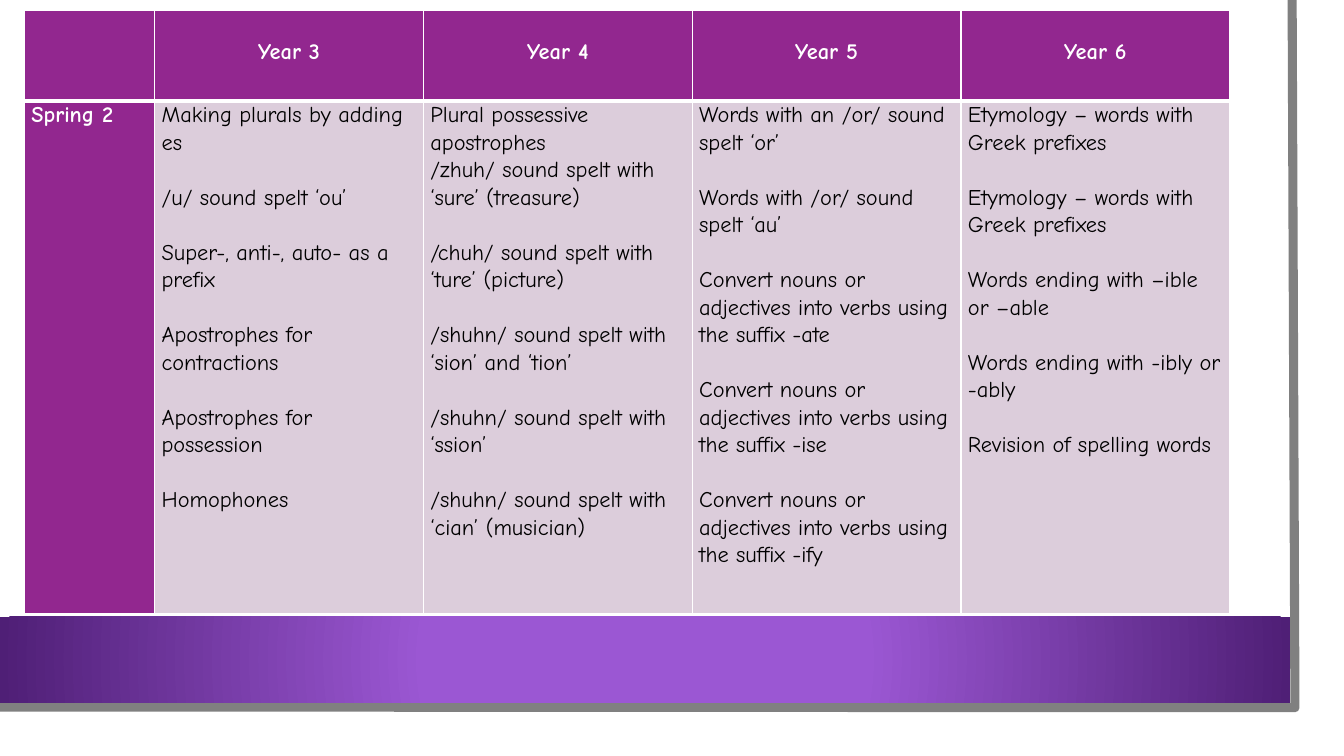
"""Build the Spring 2 spelling overview for Years 3 to 6."""
from dataclasses import dataclass

from lxml import etree
from pptx import Presentation
from pptx.dml.color import RGBColor
from pptx.enum import shapes, text
from pptx.oxml import ns
from pptx.util import Pt


@dataclass(frozen=True)
class Theme:
    font: str = "Comic Neue"
    size: float = 16
    leading: float = 1.07
    gap: float = 19.65
    heading: str = "92278F"
    body: str = "DCCDDB"
    white: str = "FFFFFF"
    black: str = "000000"
    edge: str = "808080"
    band_centre: str = "9B57D3"
    band_rim: str = "4F1F76"


theme = Theme()


def apply(target, values):
    for name, value in values.items():
        setattr(target, name, value)


def border(cell, side, width):
    line = etree.SubElement(cell._tc.get_or_add_tcPr(), ns.qn(f"a:ln{side}"), w=str(Pt(width)))
    fill = etree.SubElement(line, ns.qn("a:solidFill"))
    etree.SubElement(fill, ns.qn("a:srgbClr"), val=theme.white)


topics = {
    "Year 3": [
        "Making plurals by adding es",
        "/u/ sound spelt ‘ou’",
        "Super-, anti-, auto- as a prefix",
        "Apostrophes for contractions",
        "Apostrophes for possession",
        "Homophones",
    ],
    "Year 4": [
        "Plural possessive apostrophes\n/zhuh/ sound spelt with ‘sure’ (treasure)",
        "/chuh/ sound spelt with ‘ture’ (picture)",
        "/shuhn/ sound spelt with ‘sion’ and ‘tion’",
        "/shuhn/ sound spelt with ‘ssion’",
        "/shuhn/ sound spelt with ‘cian’ (musician)",
    ],
    "Year 5": [
        "Words with an /or/ sound spelt ‘or’",
        "Words with /or/ sound spelt ‘au’",
        "Convert nouns or adjectives into verbs using the suffix -ate",
        "Convert nouns or adjectives into verbs using the suffix -ise",
        "Convert nouns or adjectives into verbs using the suffix -ify",
    ],
    "Year 6": [
        "Etymology – words with Greek prefixes",
        "Etymology – words with Greek prefixes",
        "Words ending with –ible or –able",
        "Words ending with -ibly or -ably",
        "Revision of spelling words",
    ],
}

deck = Presentation()
apply(deck, {"slide_width": Pt(960), "slide_height": Pt(540)})
slide = deck.slides.add_slide(deck.slide_layouts[6])

outline = slide.shapes.build_freeform(Pt(923), 0)
outline.add_line_segments([(Pt(925), Pt(505.5)), (0, Pt(505))], close=False)
page_edge = outline.convert_to_shape()
page_edge.shadow.inherit = False
page_edge.fill.background()
page_edge.line.width = Pt(6.5)
page_edge.line.color.rgb = RGBColor.from_string(theme.edge)

band = slide.shapes.add_shape(shapes.MSO_SHAPE.RECTANGLE, 0, Pt(440.5), Pt(921.5), Pt(61.5))
band.shadow.inherit = False
band.line.fill.background()
band.fill.gradient()
stops = zip(band.fill.gradient_stops, (0.34, 1), (theme.band_centre, theme.band_rim))
for stop, position, colour in stops:
    stop.position = position
    stop.color.rgb = RGBColor.from_string(colour)
gradient = band._element.spPr.find(ns.qn("a:gradFill"))
gradient.remove(gradient.find(ns.qn("a:lin")))
circle = etree.SubElement(gradient, ns.qn("a:path"), path="circle")
etree.SubElement(circle, ns.qn("a:fillToRect"), l="50000", t="50000", r="50000", b="50000")

rows = [[[], *([year] for year in topics)], [["Spring 2"], *topics.values()]]
overview = slide.shapes.add_table(2, 5, Pt(17.5), Pt(7.5), Pt(861), Pt(431)).table
apply(overview, {"first_row": True, "first_col": True, "horz_banding": False})
for column, width in zip(overview.columns, [93] + [192] * 4):
    column.width = Pt(width)
for row, height in zip(overview.rows, (64.5, 366.5)):
    row.height = Pt(height)

for r, row in enumerate(rows):
    for c, entries in enumerate(row):
        cell = overview.cell(r, c)
        is_heading = r == 0 or c == 0
        for side, width in {"L": 1, "R": 1, "T": 3 if r else 1, "B": 1 if r else 3}.items():
            border(cell, side, width)
        cell.fill.solid()
        cell.fill.fore_color.rgb = RGBColor.from_string(theme.heading if is_heading else theme.body)
        apply(cell, {
            "margin_left": Pt(5),
            "margin_right": Pt(5),
            "margin_top": Pt(0 if r else theme.gap),
            "margin_bottom": 0,
            "vertical_anchor": text.MSO_ANCHOR.TOP,
        })
        lines = [(line, i > 0 and k == 0) for i, entry in enumerate(entries)
                 for k, line in enumerate(entry.split("\n"))]
        cell.text = "\n".join(line for line, _ in lines)
        for paragraph, (_, spaced) in zip(cell.text_frame.paragraphs, lines):
            apply(paragraph, {
                "alignment": text.PP_ALIGN.LEFT if r else text.PP_ALIGN.CENTER,
                "line_spacing": theme.leading,
                "space_before": Pt(theme.gap if spaced else 0),
            })
            apply(paragraph.font, {"name": theme.font, "size": Pt(theme.size), "bold": is_heading})
            paragraph.font.color.rgb = RGBColor.from_string(theme.white if is_heading else theme.black)

deck.save("out.pptx")
